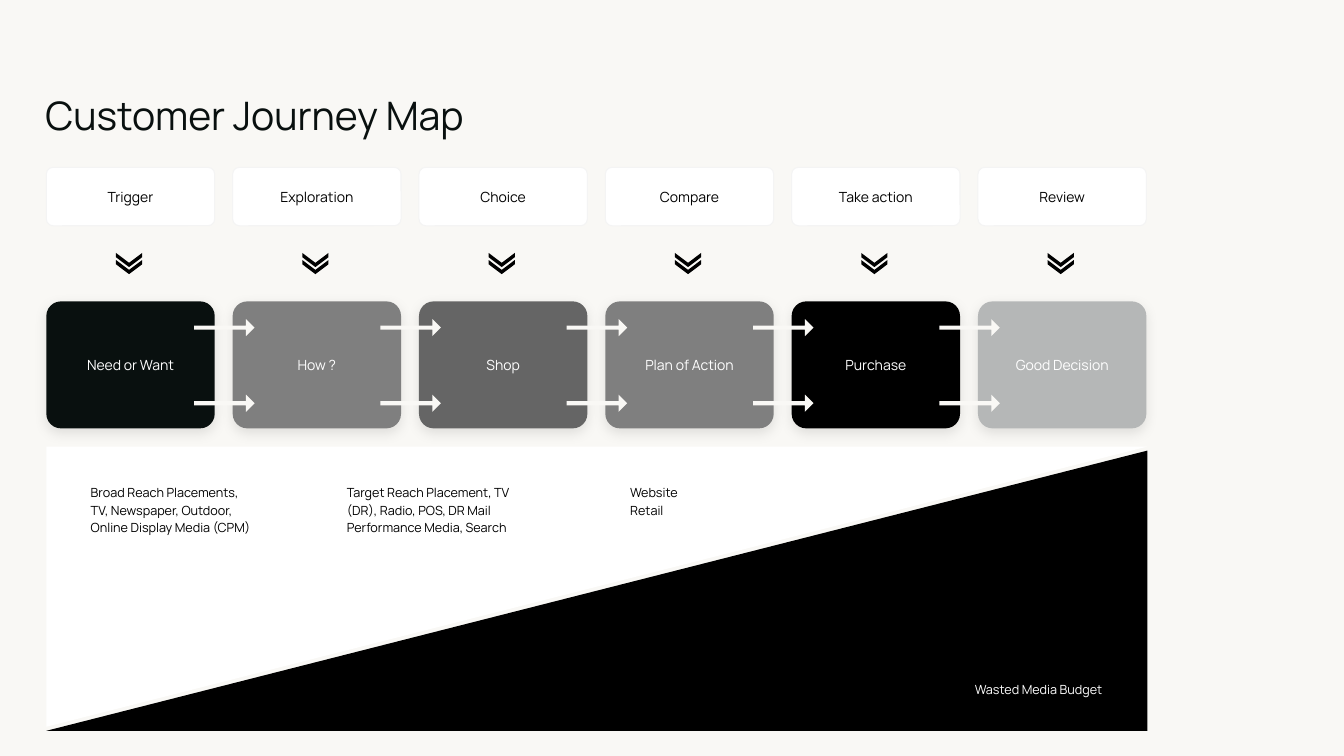
from lxml import etree
from pptx import Presentation
from pptx.dml.color import RGBColor
from pptx.enum.shapes import MSO_SHAPE
from pptx.enum.text import MSO_ANCHOR, PP_ALIGN
from pptx.oxml.ns import qn
from pptx.util import Inches, Pt

ROUNDED, CHEVRON = MSO_SHAPE.ROUNDED_RECTANGLE, MSO_SHAPE.CHEVRON
ARROW, TRIANGLE = MSO_SHAPE.DOWN_ARROW, MSO_SHAPE.RIGHT_TRIANGLE
RECTANGLE = MSO_SHAPE.RECTANGLE
LEFT, CENTER = PP_ALIGN.LEFT, PP_ALIGN.CENTER
TOP, MIDDLE = MSO_ANCHOR.TOP, MSO_ANCHOR.MIDDLE

FONT = "Manrope"
PAPER, INK, BLACK, WHITE = "F9F8F5", "09100F", "000000", "FFFFFF"
color = RGBColor.from_string

deck = Presentation()
deck.slide_width, deck.slide_height = Inches(13.33), Inches(7.5)
page = deck.slides.add_slide(deck.slide_layouts[6])
page.background.fill.solid()
page.background.fill.fore_color.rgb = color(PAPER)


def add_shape(kind, left, top, width, height, fill, rotation=0, adjustments=()):
    shape = page.shapes.add_shape(
        kind, Inches(left), Inches(top), Inches(width), Inches(height))
    shape.shadow.inherit = False
    shape.rotation = rotation
    for index, value in enumerate(adjustments):
        shape.adjustments[index] = value
    if fill:
        shape.fill.solid()
        shape.fill.fore_color.rgb = color(fill)
    else:
        shape.fill.background()
    shape.line.fill.background()
    return shape


def write(box, lines, size, ink, align=LEFT, anchor=TOP, margin=0, spacing=1):
    frame = box.text_frame
    frame.word_wrap = True
    frame.vertical_anchor = anchor
    frame.margin_left = frame.margin_right = Inches(margin)
    frame.margin_top = frame.margin_bottom = Inches(margin)
    frame.text = lines
    for para in frame.paragraphs:
        para.alignment = align
        para.line_spacing = spacing
        para.font.name = FONT
        para.font.size = Pt(size)
        para.font.color.rgb = color(ink)


# Journey columns: stage, customer step, step colour
columns = [
    ("Trigger", "Need or Want", INK),
    ("Exploration", "How ?", "7F7F7F"),
    ("Choice", "Shop", "656565"),
    ("Compare", "Plan of Action", "7F7F7F"),
    ("Take action", "Purchase", BLACK),
    ("Review", "Good Decision", "B5B7B7"),
]
first_left, last_left, card_width = 0.46, 9.7, 1.67
pitch = (last_left - first_left) / (len(columns) - 1)

for index, (stage, step, step_fill) in enumerate(columns):
    left = first_left + index * pitch

    # Stage card
    stage_card = add_shape(ROUNDED, left, 1.66, card_width, 0.58, WHITE,
                           adjustments=[0.115])
    stage_card.line.color.rgb = color("F4F4F4")
    stage_card.line.width = Pt(0.75)
    write(stage_card, stage, 10, BLACK, CENTER, MIDDLE, 0.03)

    # Double chevron
    for top in (2.52, 2.45):
        add_shape(CHEVRON, left + 0.75, top, 0.14, 0.26, BLACK, 90, [0.698])

    # Step card with a soft shadow
    step_card = add_shape(ROUNDED, left, 2.99, card_width, 1.26, step_fill,
                          adjustments=[0.115])
    write(step_card, step, 10, WHITE, CENTER, MIDDLE, 0.03)
    effects = step_card._element.spPr.find(qn("a:effectLst"))
    shadow = etree.SubElement(
        effects, qn("a:outerShdw"), blurRad=str(Pt(9)), dist=str(Pt(3)),
        dir="5400000", algn="t", rotWithShape="0")
    shade = etree.SubElement(shadow, qn("a:srgbClr"), val=BLACK)
    etree.SubElement(shade, qn("a:alpha"), val="9000")

# Arrow pairs between neighbouring steps, above all cards
for index in range(len(columns) - 1):
    for top in (2.95, 3.7):
        add_shape(ARROW, 2.14 + index * pitch, top, 0.17, 0.6, PAPER, 270,
                  [0.243, 0.5])

# Media budget wedge
add_shape(TRIANGLE, 4.53, 0.36, 2.78, 10.92, WHITE, 90)
add_shape(TRIANGLE, 4.53, 0.4, 2.78, 10.92, BLACK, 270)

# Wedge label, media notes and title
texts = [
    ("Wasted Media Budget", 9.6, 6.76, 1.4, 0.15, 9, WHITE, CENTER, 1, None),
    ("Broad Reach Placements, TV, Newspaper, Outdoor, Online Display Media (CPM)",
     0.9, 4.79, 1.65, 0.57, 9, BLACK, LEFT, 1.15, None),
    ("Target Reach Placement, TV (DR), Radio, POS, DR Mail Performance Media, Search",
     3.44, 4.79, 1.67, 0.57, 9, BLACK, LEFT, 1.15, None),
    ("Website\nRetail", 6.25, 4.79, 1.41, 0.37, 9, BLACK, LEFT, 1.15, None),
    ("Customer Journey Map", 0.45, 0.91, 9.23, 0.51, 28, INK, LEFT, 1, PAPER),
]
for lines, left, top, width, height, size, ink, align, spacing, fill in texts:
    box = add_shape(RECTANGLE, left, top, width, height, fill)
    write(box, lines, size, ink, align, spacing=spacing)

deck.save("out.pptx")
